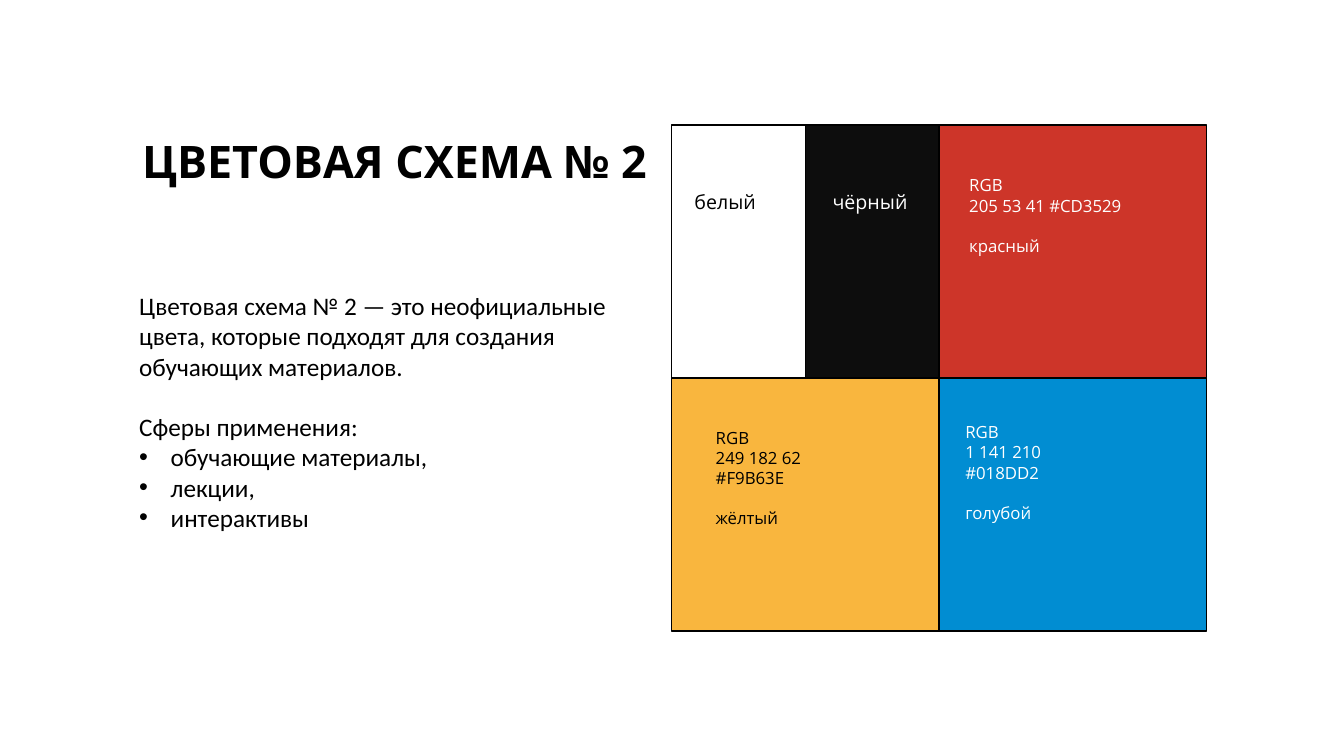
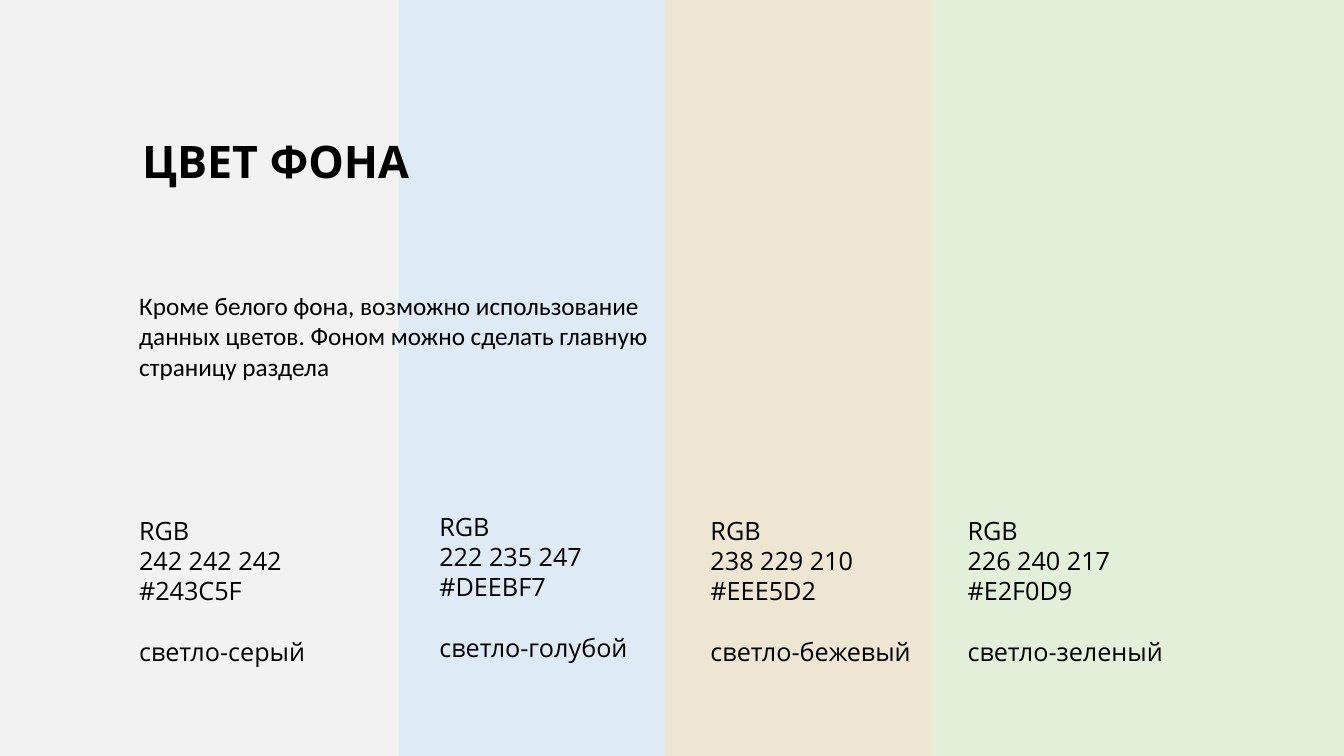
import dataclasses

import lxml.etree
import pptx
import pptx.dml.color
import pptx.enum.shapes
import pptx.enum.text
import pptx.oxml.ns
import pptx.util

Pt = pptx.util.Pt


@dataclasses.dataclass(frozen=True)
class Theme:
    black: str = "000000"
    white: str = "FFFFFF"
    near_black: str = "0D0D0D"
    red: str = "CD3529"
    yellow: str = "F9B63E"
    blue: str = "018DD2"
    light_gray: str = "F2F2F2"
    light_blue: str = "DEEBF7"
    light_beige: str = "EEE5D2"
    light_green: str = "E2F0D9"
    display_font: str = "Open Sans"
    body_font: str = "Calibri"
    title_size: float = 32
    body_size: float = 18
    name_size: float = 14
    code_size: float = 12
    line_pitch: float = 1.2
    bullet_indent: float = 22.5


THEME = Theme()
SLIDE_WIDTH, SLIDE_HEIGHT = 960, 540
TITLE_BOX = (94.3, 92.2, 385.2, 46)
BODY_LEFT, BODY_TOP, BODY_WIDTH = 92.2, 203.8, 386


def rgb(color):
    return pptx.dml.color.RGBColor.from_string(color)


def place(shape, box):
    shape.left, shape.top, shape.width, shape.height = map(Pt, box)


def write(text_frame, blocks, size, color=THEME.black, font=THEME.display_font, bold=False):
    """Write blocks of lines, with one line's height between blocks."""
    text_frame.word_wrap = True
    text_frame.auto_size = pptx.enum.text.MSO_AUTO_SIZE.NONE
    text_frame.vertical_anchor = pptx.enum.text.MSO_ANCHOR.TOP
    text_frame.text = "\n".join(line for block in blocks for line in block)
    paragraphs = iter(text_frame.paragraphs)
    for block_number, block in enumerate(blocks):
        for line_number, _ in enumerate(block):
            paragraph = next(paragraphs)
            starts_later_block = block_number > 0 and line_number == 0
            paragraph.space_before = Pt(size * THEME.line_pitch if starts_later_block else 0)
            paragraph.alignment = pptx.enum.text.PP_ALIGN.LEFT
            for run in paragraph.runs:
                run.font.name = font
                run.font.size = Pt(size)
                run.font.bold = bold
                run.font.color.rgb = rgb(color)


def set_bullet(paragraph, bulleted):
    properties = paragraph._p.get_or_add_pPr()
    indent = Pt(THEME.bullet_indent if bulleted else 0)
    properties.set("marL", str(indent))
    properties.set("indent", str(-indent))
    if bulleted:
        font = lxml.etree.SubElement(properties, pptx.oxml.ns.qn("a:buFont"))
        font.set("typeface", "Arial")
        bullet = lxml.etree.SubElement(properties, pptx.oxml.ns.qn("a:buChar"))
        bullet.set("char", "•")
    else:
        lxml.etree.SubElement(properties, pptx.oxml.ns.qn("a:buNone"))


def add_rectangle(slide, box, fill, line=None):
    shape = slide.shapes.add_shape(pptx.enum.shapes.MSO_SHAPE.RECTANGLE, *map(Pt, box))
    shape.shadow.inherit = False
    shape.fill.solid()
    shape.fill.fore_color.rgb = rgb(fill)
    if line:
        shape.line.color.rgb = rgb(line)
        shape.line.width = Pt(1)
    else:
        shape.line.fill.background()
    return shape


def add_label(slide, box, blocks, size, color=THEME.black):
    label = slide.shapes.add_textbox(*map(Pt, box))
    write(label.text_frame, blocks, size, color)


def add_text_slide(presentation, title, blocks, body_height, bullets=()):
    slide = presentation.slides.add_slide(presentation.slide_layouts[1])
    place(slide.shapes.title, TITLE_BOX)
    write(slide.shapes.title.text_frame, [[title]], THEME.title_size, bold=True)
    body = slide.placeholders[1]
    place(body, (BODY_LEFT, BODY_TOP, BODY_WIDTH, body_height))
    write(body.text_frame, blocks, THEME.body_size, font=THEME.body_font)
    for paragraph in body.text_frame.paragraphs:
        set_bullet(paragraph, paragraph.text in bullets)
    return slide


def add_swatch(slide, box, fill, color, label_offset, label_size, blocks, size):
    add_rectangle(slide, box, fill, THEME.black)
    left, top = box[0] + label_offset[0], box[1] + label_offset[1]
    add_label(slide, (left, top, *label_size), blocks, size, color)


def add_palette(slide, box):
    left, top, width, height = box
    cell_width, cell_height = width / 2, height / 2
    code_label, name_label = (167, 80), (77, 24.5)
    swatches = [
        (0, 0, 1, THEME.white, THEME.black, (9.4, 43.2), name_label,
         [["белый"]], THEME.name_size),
        (1, 0, 1, THEME.red, THEME.white, (14.4, 32.4), (126, 65.5),
         [["RGB", "205 53 41 #CD3529"], ["красный"]], THEME.code_size),
        (0, 1, 1, THEME.yellow, THEME.black, (24.5, 31.7), code_label,
         [["RGB", "249 182 62", "#F9B63E"], ["жёлтый"]], THEME.code_size),
        (1, 1, 1, THEME.blue, THEME.white, (11.6, 28), code_label,
         [["RGB", "1 141 210", "#018DD2"], ["голубой"]], THEME.code_size),
        (0.5, 0, 0.5, THEME.near_black, THEME.white, (12.4, 43.2), name_label,
         [["чёрный"]], THEME.name_size),
    ]
    for column, row, share, fill, *label in swatches:
        cell = (left + column * cell_width, top + row * cell_height,
                share * cell_width, cell_height)
        add_swatch(slide, cell, fill, *label)


def add_background_bands(slide, box):
    left, top, width, height = box
    bands = [
        (0, THEME.light_gray, 92.2, 364.3, "242 242 242", "#243C5F", "светло-серый"),
        (285, THEME.light_blue, 306.7, 361.6, "222 235 247", "#DEEBF7", "светло-голубой"),
        (475, THEME.light_beige, 500.4, 364.3, "238 229 210", "#EEE5D2", "светло-бежевый"),
        (665, THEME.light_green, 684, 364.3, "226 240 217", "#E2F0D9", "светло-зеленый"),
    ]
    ends = [band[0] for band in bands[1:]] + [width]
    for (start, fill, label_left, label_top, values, code, name), end in zip(bands, ends):
        band = add_rectangle(slide, (left + start, top, end - start, height), fill)
        slide.shapes.title.element.addprevious(band.element)
        add_label(slide, (left + label_left, top + label_top, 167, 116.6),
                  [["RGB", values, code], [name]], THEME.body_size)


def add_scheme_slide(presentation):
    uses = ["обучающие материалы,", "лекции,", "интерактивы"]
    blocks = [
        ["Цветовая схема № 2 — это неофициальные цвета, которые подходят "
         "для создания обучающих материалов."],
        ["Сферы применения:", *uses],
    ]
    slide = add_text_slide(presentation, "ЦВЕТОВАЯ СХЕМА № 2", blocks, 225.4, uses)
    add_palette(slide, (479.6, 89.2, 382.4, 361.5))


def add_background_slide(presentation):
    blocks = [["Кроме белого фона, возможно использование данных цветов. "
               "Фоном можно сделать главную страницу раздела"]]
    slide = add_text_slide(presentation, "ЦВЕТ ФОНА", blocks, 94.3)
    add_background_bands(slide, (0, 0, SLIDE_WIDTH, SLIDE_HEIGHT))


def main():
    presentation = pptx.Presentation()
    presentation.slide_width = Pt(SLIDE_WIDTH)
    presentation.slide_height = Pt(SLIDE_HEIGHT)
    add_scheme_slide(presentation)
    add_background_slide(presentation)
    presentation.save("out.pptx")


if __name__ == "__main__":
    main()
